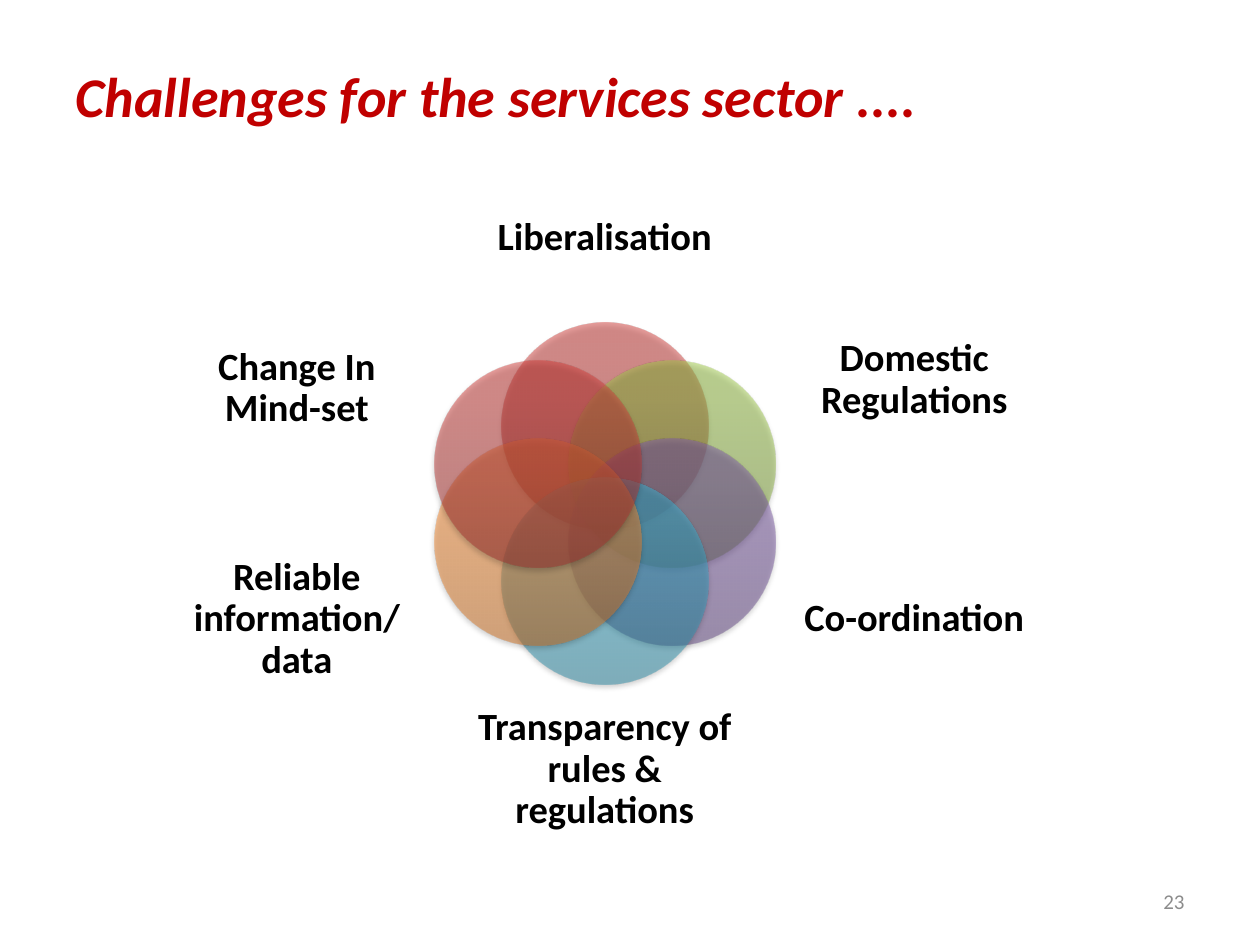
from math import cos, radians, sin

from lxml.etree import SubElement
from pptx import Presentation
from pptx.dml.color import RGBColor
from pptx.enum.shapes import MSO_SHAPE
from pptx.enum.text import MSO_ANCHOR, PP_ALIGN
from pptx.oxml.ns import qn
from pptx.util import Pt

FONT = "Calibri"
TITLE_RED = RGBColor(0xC0, 0x00, 0x00)
BLACK = RGBColor(0x00, 0x00, 0x00)
GREY = RGBColor(0x8C, 0x8C, 0x8C)


def shades(*codes):
    return [RGBColor.from_string(code) for code in codes]


RED = shades("9C2F2D", "CB3E3A", "CE3B37")
GREEN = shades("779737", "9BC348", "9DC746")
PURPLE = shades("5F4480", "7B58A6", "7C57A8")
TEAL = shades("2A88A2", "37B1D2", "34B4D6")
ORANGE = shades("CC6E20", "FF9034", "FF9136")
STOPS = (0, 80, 100)

CENTER_X, CENTER_Y = 345.6, 287.6
RING_RADIUS = 44.3
DIAMETER = 118.1

LEFT, MIDDLE, RIGHT = 99.4, 271.4, 452.2
SIDE_WIDTH, MIDDLE_WIDTH = 140.4, 148.3
CHALLENGES = [
    ("Liberalisation", RED, (MIDDLE, 95.8, MIDDLE_WIDTH, 80.6)),
    ("Domestic Regulations", GREEN, (RIGHT, 172.8, SIDE_WIDTH, 88.6)),
    ("Co-ordination", PURPLE, (RIGHT, 304.6, SIDE_WIDTH, 98.6)),
    ("Transparency of rules & regulations", TEAL, (MIDDLE, 399.6, MIDDLE_WIDTH, 80.6)),
    ("Reliable information/ data", ORANGE, (LEFT, 304.6, SIDE_WIDTH, 98.6)),
    ("Change In Mind-set", RED, (LEFT, 172.8, SIDE_WIDTH, 98.6)),
]


def add_color(parent, color, opacity):
    node = SubElement(parent, qn("a:srgbClr"), val=str(color))
    SubElement(node, qn("a:alpha"), val=str(opacity * 1000))


def fill_gradient(petal, colors):
    petal.fill.gradient()
    petal.fill.gradient_angle = 90
    stop_list = petal._element.spPr.find(qn("a:gradFill")).find(qn("a:gsLst"))
    for stop in list(stop_list):
        stop_list.remove(stop)
    for position, color in zip(STOPS, colors):
        stop = SubElement(stop_list, qn("a:gs"), pos=str(position * 1000))
        add_color(stop, color, 50)


def add_soft_shadow(petal):
    petal.shadow.inherit = False
    effects = petal._element.spPr.find(qn("a:effectLst"))
    shadow = SubElement(effects, qn("a:outerShdw"), blurRad=str(Pt(3.1)),
                        dist=str(Pt(1.8)), dir="5400000", rotWithShape="0")
    add_color(shadow, BLACK, 35)


def add_petal(diagram, angle, colors):
    left = CENTER_X + RING_RADIUS * sin(radians(angle)) - DIAMETER / 2
    top = CENTER_Y - RING_RADIUS * cos(radians(angle)) - DIAMETER / 2
    petal = diagram.shapes.add_shape(
        MSO_SHAPE.OVAL, Pt(left), Pt(top), Pt(DIAMETER), Pt(DIAMETER))
    fill_gradient(petal, colors)
    petal.line.fill.background()
    add_soft_shadow(petal)


def add_text(shapes, text, box, size, color, align):
    frame = shapes.add_textbox(*map(Pt, box)).text_frame
    frame.word_wrap = True
    frame.vertical_anchor = MSO_ANCHOR.MIDDLE
    frame.text = text
    paragraph = frame.paragraphs[0]
    paragraph.alignment = align
    set_font(paragraph, size, color)
    return frame


def set_font(paragraph, size, color):
    paragraph.font.name = FONT
    paragraph.font.size = Pt(size)
    paragraph.font.color.rgb = color


def add_label(diagram, text, box):
    frame = add_text(diagram.shapes, text, box, 22, BLACK, PP_ALIGN.CENTER)
    frame.margin_left = frame.margin_right = 0
    frame.margin_top = frame.margin_bottom = 0
    paragraph = frame.paragraphs[0]
    paragraph.line_spacing = 0.9
    paragraph.font.bold = True


def set_title(slide, text):
    title = slide.shapes.title
    title.left, title.top, title.width, title.height = map(Pt, (36, 9.4, 648, 90))
    title.text_frame.text = text
    title.text_frame.vertical_anchor = MSO_ANCHOR.MIDDLE
    heading = title.text_frame.paragraphs[0]
    heading.alignment = PP_ALIGN.LEFT
    set_font(heading, 32, TITLE_RED)
    heading.font.bold = True
    heading.font.italic = True


def main():
    deck = Presentation()
    deck.slide_width, deck.slide_height = Pt(720), Pt(540)
    slide = deck.slides.add_slide(deck.slide_layouts[5])
    set_title(slide, "Challenges for the services sector ....")
    add_text(slide.shapes, "23", (516, 500.5, 168, 28.8), 12, GREY, PP_ALIGN.RIGHT)
    diagram = slide.shapes.add_group_shape()
    for index, (challenge, colors, box) in enumerate(CHALLENGES):
        add_petal(diagram, index * 360 / len(CHALLENGES), colors)
        add_label(diagram, challenge, box)
    deck.save("out.pptx")


if __name__ == "__main__":
    main()
